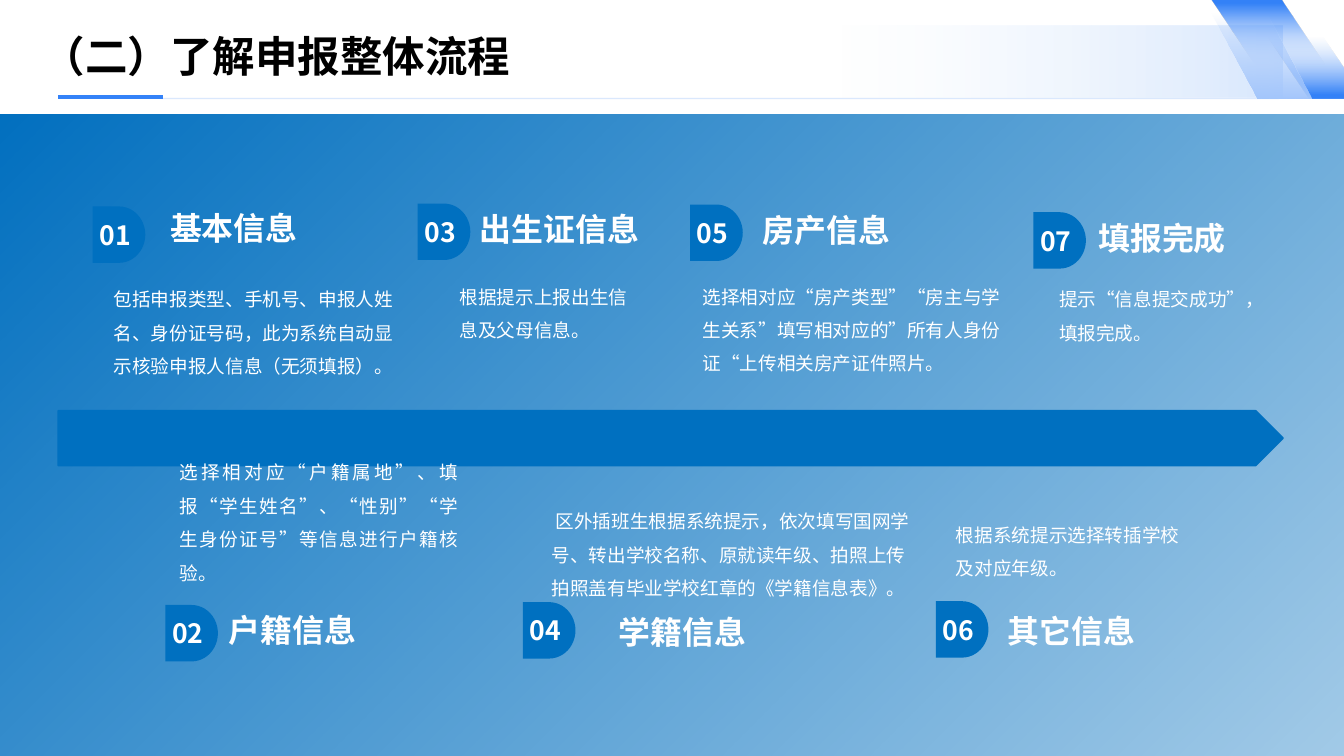
from dataclasses import dataclass

from lxml import etree
from pptx import Presentation
from pptx.dml.color import RGBColor
from pptx.enum.shapes import MSO_CONNECTOR, MSO_SHAPE
from pptx.enum.text import MSO_ANCHOR, PP_ALIGN
from pptx.oxml.ns import qn
from pptx.util import Inches, Pt

BLUE = RGBColor(0x00, 0x70, 0xC0)
ACCENT = RGBColor(0x34, 0x82, 0xF8)
PALE = RGBColor(0xA3, 0xC6, 0xFC)
WHITE = RGBColor(0xFF, 0xFF, 0xFF)
BLACK = RGBColor(0x00, 0x00, 0x00)
CJK_FONT = "Noto Sans CJK SC"
TITLE_FONT = "Arial"
RECT, ARROW, BADGE = MSO_SHAPE.RECTANGLE, MSO_SHAPE.PENTAGON, MSO_SHAPE.FLOWCHART_DELAY
STRAIGHT = MSO_CONNECTOR.STRAIGHT
TOP, MIDDLE, BOTTOM = MSO_ANCHOR.TOP, MSO_ANCHOR.MIDDLE, MSO_ANCHOR.BOTTOM
LEFT, CENTER, JUSTIFY = PP_ALIGN.LEFT, PP_ALIGN.CENTER, PP_ALIGN.JUSTIFY

SLIDE_W, SLIDE_H = 14.06, 7.91
HEADER_H = 1.2


@dataclass
class Step:
    """One stage: badge corner, heading and body boxes relative to that corner."""
    number: str
    corner: tuple
    heading: str
    heading_box: tuple
    body: str
    body_box: tuple
    body_anchor: int = TOP
    body_align: int = LEFT


STEPS = [
    Step("01", (0.97, 2.16), "基本信息", (0.81, 0, 1.67),
         "包括申报类型、手机号、申报人姓名、身份证号码，此为系统自动显示核验申报人信息（无须填报）。",
         (0.22, 0.74, 2.96, 1.21)),
    Step("02", (1.73, 6.33), "户籍信息", (0.66, 0.03, 1.47),
         "选择相对应“户籍属地”、填报“学生姓名”、“性别”“学生身份证号”等信息进行户籍核验。",
         (0.15, -1.3, 2.91, 1.08), BOTTOM, JUSTIFY),
    Step("03", (4.37, 2.13), "出生证信息", (0.65, 0.04, 2.02),
         "根据提示上报出生信息及父母信息。", (0.44, 0.74, 1.86, 1.49)),
    Step("04", (5.47, 6.3), "学籍信息", (1, 0.08, 1.94),
         " 区外插班生根据系统提示，依次填写国网学号、转出学校名称、原就读年级、拍照上传拍照盖有毕业学校红章的《学籍信息表》。",
         (0.3, -1.39, 3.78, 1.36), BOTTOM),
    Step("05", (7.22, 2.14), "房产信息", (0.76, 0.04, 1.38),
         "选择相对应“房产类型”“房主与学生关系”填写相对应的”所有人身份证“上传相关房产证件照片。",
         (0.13, 0.73, 3.17, 1.09)),
    Step("06", (9.79, 6.29), "其它信息", (0.75, 0.08, 1.86),
         "根据系统提示选择转插学校及对应年级。", (0.21, -1.35, 2.45, 1.12), BOTTOM),
    Step("07", (10.81, 2.22), "填报完成", (0.68, 0.04, 1.4),
         "提示“信息提交成功”，填报完成。", (0.27, 0.68, 2.01, 1.21)),
]

RIBBONS = [
    ([(13.69, 1.03), (13.03, 0.04), (13.6, 0.04), (14.06, 0.72), (14.06, 1.03)],
     ((35, PALE, 0), (96, ACCENT, 100)), 90),
    ([(13.37, 1.04), (12.67, 0), (13.4, 0), (14.06, 0.98), (14.06, 1.04)],
     ((35, PALE, 0), (96, ACCENT, 100)), 270),
    ([(13.25, 0.14), (13.72, 1.03), (13.15, 1.03), (12.67, 0.14)],
     ((0, PALE, 0), (100, PALE, 100)), 90),
]


def set_alpha(color_element, percent):
    """Give a colour element an opacity in percent."""
    etree.SubElement(color_element, qn("a:alpha"), val=str(percent * 1000))


def paint_gradient(shape, stops, clockwise_angle):
    """Fill a borderless shape with two (position, colour, opacity) stops."""
    shape.shadow.inherit = False
    shape.line.fill.background()
    shape.fill.gradient()
    shape.fill.gradient_angle = (360 - clockwise_angle) % 360
    for gradient_stop, (position, color, _) in zip(shape.fill.gradient_stops, stops):
        gradient_stop.position = position / 100
        gradient_stop.color.rgb = color
    colors = shape._element.spPr.findall(".//" + qn("a:gs") + "/" + qn("a:srgbClr"))
    for color_element, (_, _, opacity) in zip(colors, stops):
        set_alpha(color_element, opacity)


def add_block(slide, kind, box):
    """Add a plain blue preset shape."""
    block = slide.shapes.add_shape(kind, *map(Inches, box))
    block.shadow.inherit = False
    block.fill.solid()
    block.fill.fore_color.rgb = BLUE
    block.line.fill.background()
    return block


def write(shape, text, size, color=WHITE, bold=False, font_name=CJK_FONT,
          anchor=MIDDLE, align=LEFT, spacing=1, inset=0, wrap=True):
    """Put one formatted paragraph into a shape."""
    frame = shape.text_frame
    frame.word_wrap = wrap
    frame.vertical_anchor = anchor
    frame.margin_left = frame.margin_right = Inches(inset)
    frame.margin_top = frame.margin_bottom = Inches(inset / 2)
    paragraph = frame.paragraphs[0]
    paragraph.text = text
    paragraph.alignment = align
    paragraph.line_spacing = spacing
    font = paragraph.font
    font.size, font.bold, font.name = Pt(size), bold, font_name
    font.color.rgb = color
    defaults = paragraph._p.pPr.find(qn("a:defRPr"))
    etree.SubElement(defaults, qn("a:ea"), typeface=CJK_FONT)


def add_text(slide, box, text, size, **style):
    """Add a text box."""
    write(slide.shapes.add_textbox(*map(Inches, box)), text, size, **style)


def add_rule(slide, start, end, color, width, opacity=100):
    """Add a straight line without a shadow."""
    rule = slide.shapes.add_connector(STRAIGHT, *map(Inches, start + end))
    rule.line.color.rgb = color
    rule.line.width = Pt(width)
    properties = rule._element.spPr
    set_alpha(properties.find(".//" + qn("a:srgbClr")), opacity)
    etree.SubElement(properties, qn("a:effectLst"))


def add_header(slide, left, top, width, title):
    """Draw the faded band, the title and its underline."""
    right, base = left + width, top + 0.75
    band = slide.shapes.add_shape(RECT, *map(Inches, (right - 8.63, top, 8.63, 0.75)))
    paint_gradient(band, ((46, PALE, 0), (100, ACCENT, 19)), 0)
    add_rule(slide, (left + 1.08, base + 0.01), (right - 0.04, base + 0.01), PALE, 1, 40)
    add_rule(slide, (left, base), (left + 1.1, base), ACCENT, 3)
    add_text(slide, (left - 0.26, top, width + 0.23, 0.64), title, 32, color=BLACK,
             bold=True, font_name=TITLE_FONT, anchor=TOP, inset=0.1)


def add_step(slide, step):
    """Place a numbered badge with its heading and body."""
    left, top = step.corner
    badge = add_block(slide, BADGE, (left, top, 0.55, 0.59))
    write(badge, step.number, 20, bold=True, align=CENTER, wrap=False)
    dx, dy, width = step.heading_box
    add_text(slide, (left + dx, top + dy, width, 0.45), step.heading, 24, bold=True)
    dx, dy, width, height = step.body_box
    add_text(slide, (left + dx, top + dy, width, height), step.body, 14,
             anchor=step.body_anchor, align=step.body_align, spacing=1.5)


def add_ribbons(slide):
    """Draw the slanted ribbons in the top right corner."""
    for points, stops, angle in RIBBONS:
        corners = [(Inches(x), Inches(y)) for x, y in points]
        builder = slide.shapes.build_freeform(*corners[0])
        builder.add_line_segments(corners[1:], close=True)
        paint_gradient(builder.convert_to_shape(), stops, angle)


def main():
    """Build the process slide."""
    deck = Presentation()
    deck.slide_width, deck.slide_height = Inches(SLIDE_W), Inches(SLIDE_H)
    slide = deck.slides.add_slide(deck.slide_layouts[6])
    backdrop = add_block(slide, RECT, (0, HEADER_H, SLIDE_W, SLIDE_H - HEADER_H))
    paint_gradient(backdrop, ((0, BLUE, 37), (100, BLUE, 100)), 225)
    add_header(slide, 0.61, 0.27, 12.81, "（二）了解申报整体流程")
    timeline = add_block(slide, ARROW, (0.61, 4.3, 12.81, 0.57))
    timeline.line.color.rgb = BLUE
    timeline.line.width = Pt(1.5)
    for step in STEPS:
        add_step(slide, step)
    add_ribbons(slide)
    deck.save("out.pptx")


if __name__ == "__main__":
    main()
